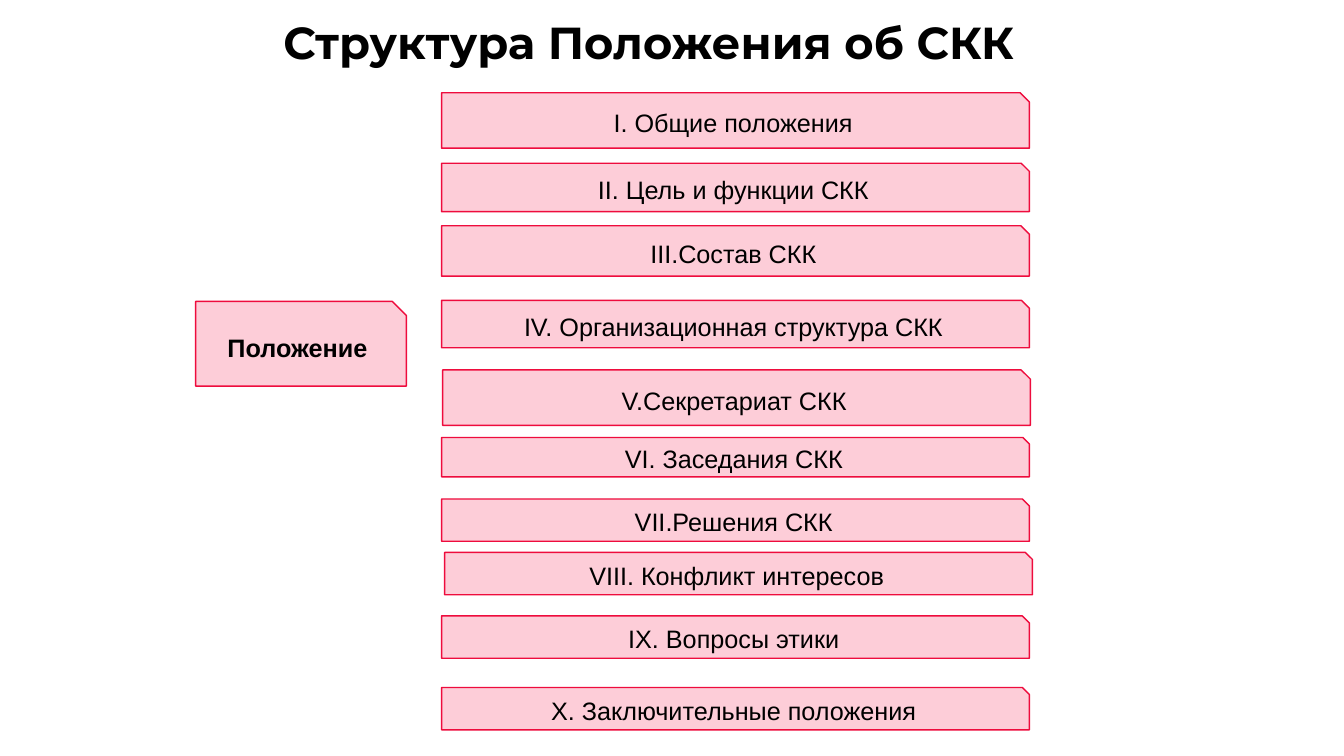
from pptx import Presentation
from pptx.dml.color import RGBColor
from pptx.enum.shapes import MSO_SHAPE
from pptx.enum.text import MSO_ANCHOR, PP_ALIGN
from pptx.util import Inches, Pt

TITLE = "Структура Положения об СКК"
DOCUMENT = ("Положение", 1.94, 2.99, 2.09, 0.84)
SECTION_LEFT, SECTION_WIDTH = 4.38, 5.83
SECTIONS = [
    ("I. Общие положения", 0, 0.92, 0.55),
    ("II. Цель и функции СКК", 0, 1.62, 0.48),
    ("III.Состав СКК", 0, 2.24, 0.5),
    ("IV. Организационная структура СКК", 0, 2.98, 0.47),
    ("V.Секретариат СКК", 0.01, 3.67, 0.55),
    ("VI. Заседания СКК", 0, 4.34, 0.39),
    ("VII.Решения СКК", 0, 4.95, 0.42),
    ("VIII. Конфликт интересов", 0.03, 5.48, 0.42),
    ("IX. Вопросы этики", 0, 6.11, 0.42),
    ("X. Заключительные положения", 0, 6.82, 0.42),
]


def color(value):
    return RGBColor.from_string(value)


def add_text(para, text, size, font, bold):
    span = para.add_run()
    span.text = text
    span.font.size = Pt(size)
    span.font.name = font
    span.font.bold = bold
    span.font.color.rgb = color("000000")


def add_title(page):
    title = page.shapes.title
    title.left, title.top = Inches(2.81), Inches(0.21)
    title.width, title.height = Inches(8.53), Inches(0.54)
    frame = title.text_frame
    frame.margin_left = frame.margin_right = 0
    frame.margin_top = frame.margin_bottom = 0
    frame.vertical_anchor = MSO_ANCHOR.TOP
    para = frame.paragraphs[0]
    para.alignment = PP_ALIGN.LEFT
    para.line_spacing = 0.9
    add_text(para, TITLE, 32, "Montserrat", True)


def add_box(page, text, left, top, width, height, bold=False):
    box = page.shapes.add_shape(
        MSO_SHAPE.SNIP_1_RECTANGLE,
        Inches(left), Inches(top), Inches(width), Inches(height))
    box.shadow.inherit = False
    box.fill.solid()
    box.fill.fore_color.rgb = color("FDCDD8")
    box.line.color.rgb = color("EE0C3D")
    box.line.width = Pt(1)
    frame = box.text_frame
    frame.word_wrap = True
    frame.vertical_anchor = MSO_ANCHOR.MIDDLE
    para = frame.paragraphs[0]
    para.alignment = PP_ALIGN.CENTER
    add_text(para, text, 18, "Arial", bold)


def main():
    deck = Presentation()
    deck.slide_width, deck.slide_height = Inches(13.33), Inches(7.5)
    page = deck.slides.add_slide(deck.slide_layouts[5])
    add_title(page)
    add_box(page, *DOCUMENT, bold=True)
    for text, shift, top, height in SECTIONS:
        add_box(page, text, SECTION_LEFT + shift, top, SECTION_WIDTH, height)
    deck.save("out.pptx")


if __name__ == "__main__":
    main()
